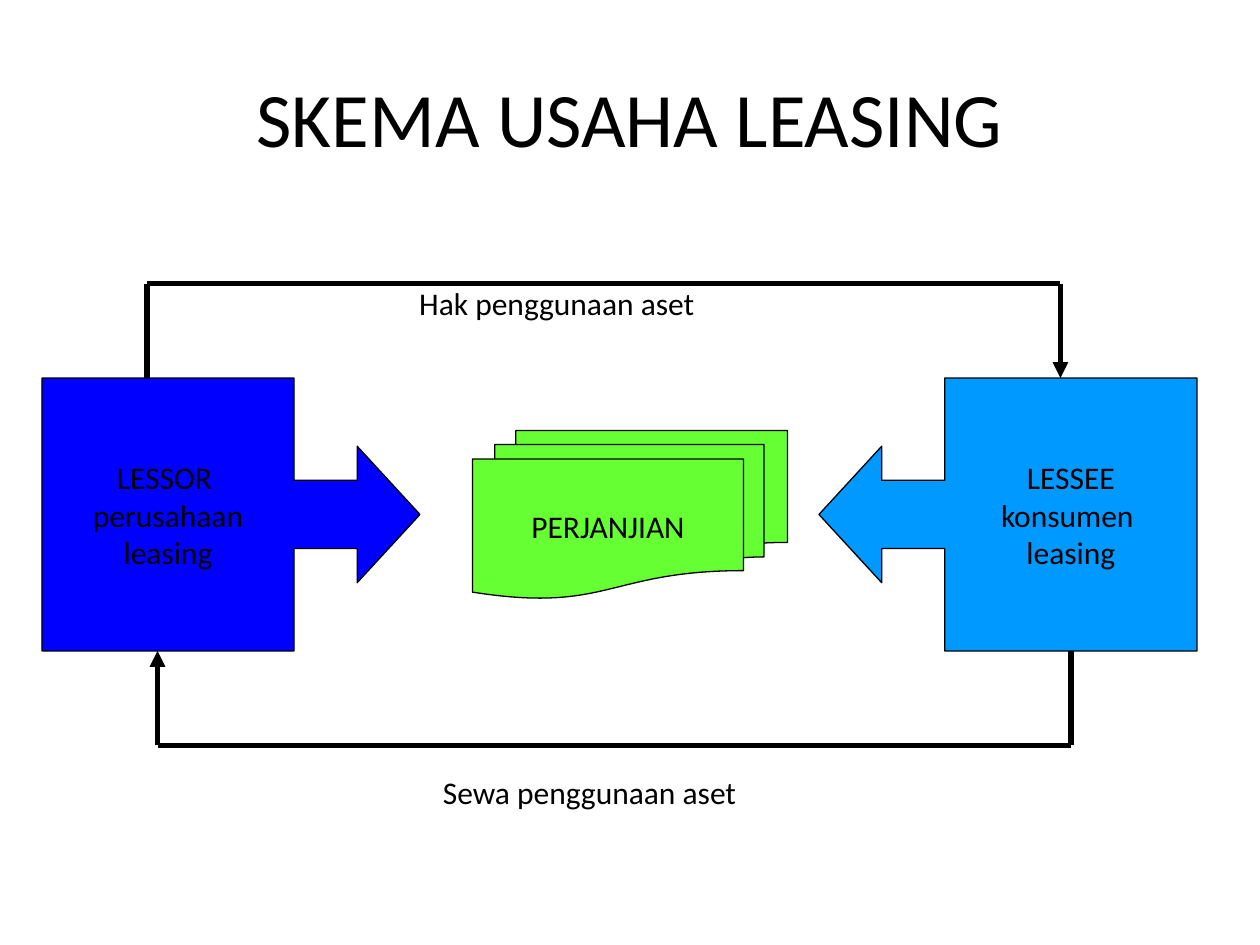
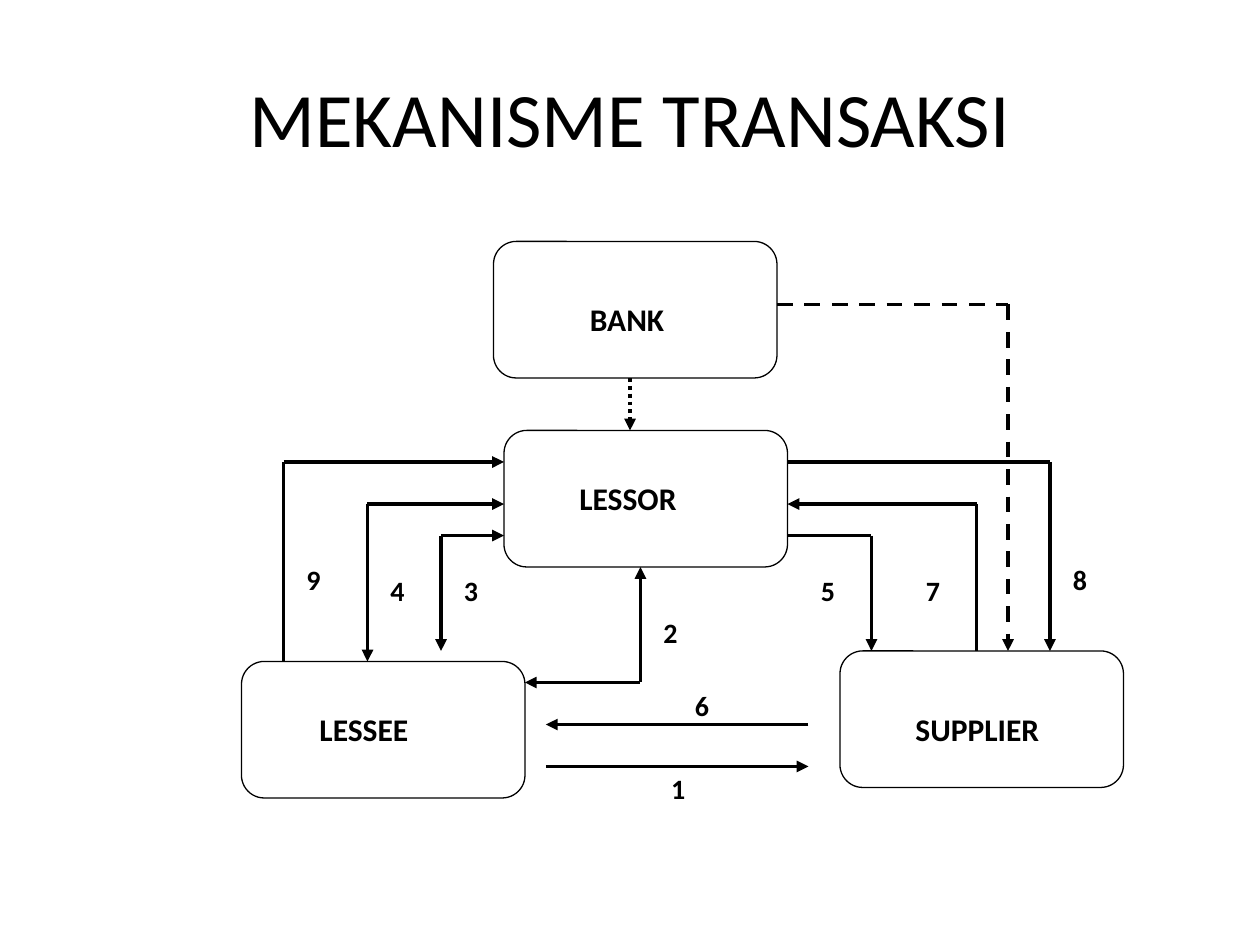
from pptx import Presentation
from pptx.dml.color import RGBColor as RGB
from pptx.enum.dml import MSO_LINE as DASH
from pptx.enum.shapes import MSO_CONNECTOR as CONN, MSO_SHAPE as SHAPE
from pptx.enum.text import MSO_ANCHOR as ANCHOR, PP_ALIGN as ALIGN
from pptx.oxml.ns import qn
from pptx.util import Pt
from lxml.etree import SubElement

PX = 9525
COLORS = {"ink": "000000", "lessor": "0000FF", "lessee": "0099FF", "paper": "66FF33"}
INK = RGB.from_string(COLORS["ink"])
TITLE = {"name": "Calibri", "size": Pt(44)}
BODY = {"name": "Calibri", "size": Pt(18)}
BOLD = {**BODY, "bold": True}
NUMBER = {**BOLD, "size": Pt(16)}


def write(shape, text, font, align=ALIGN.LEFT, anchor=ANCHOR.TOP, wrap=True):
    tf = shape.text_frame
    tf.text = text
    tf.word_wrap = wrap
    tf.vertical_anchor = anchor
    for p in tf.paragraphs:
        p.alignment = align
        for r in p.runs:
            r.font.color.rgb = INK
            for key, value in font.items():
                setattr(r.font, key, value)


def route(s, points, width, both=False, dash=None):
    last = len(points) - 2
    for i, (start, end) in enumerate(zip(points, points[1:])):
        c = s.shapes.add_connector(CONN.STRAIGHT, *[v * PX for v in start + end])
        c.line.color.rgb = INK
        c.line.width = Pt(width)
        if dash:
            c.line.dash_style = dash
        sp_pr = c._element.spPr
        ln = sp_pr.find(qn("a:ln"))
        if both and i == 0:
            SubElement(ln, qn("a:headEnd"), type="triangle")
        if i == last:
            SubElement(ln, qn("a:tailEnd"), type="triangle")
        SubElement(sp_pr, qn("a:effectLst"))


prs = Presentation()
prs.slide_width, prs.slide_height = 960 * PX, 720 * PX
slides = []
for title in ("SKEMA USAHA LEASING", "MEKANISME TRANSAKSI"):
    s = prs.slides.add_slide(prs.slide_layouts[6])
    tb = s.shapes.add_textbox(48 * PX, 29 * PX, 864 * PX, 120 * PX)
    write(tb, title, TITLE, ALIGN.CENTER, ANCHOR.MIDDLE)
    slides.append(s)
scheme, mechanism = slides

parties = [
    (SHAPE.FLOWCHART_MULTIDOCUMENT, (360, 328, 240, 128), "paper", "PERJANJIAN", ()),
    (SHAPE.RIGHT_ARROW_CALLOUT, (32, 288, 288, 208), "lessor",
     "LESSOR \nperusahaan\nleasing", (0.25, 0.25, 0.23, 0.667)),
    (SHAPE.LEFT_ARROW_CALLOUT, (624, 288, 288, 208), "lessee",
     "LESSEE\nkonsumen \nleasing", (0.25, 0.25, 0.23, 0.667)),
]
for kind, box, color, text, adjustments in parties:
    sp = scheme.shapes.add_shape(kind, *[v * PX for v in box])
    sp.shadow.inherit = False
    sp.fill.solid()
    sp.fill.fore_color.rgb = RGB.from_string(COLORS[color])
    sp.line.color.rgb = INK
    sp.line.width = Pt(0.75)
    for i, value in enumerate(adjustments):
        sp.adjustments[i] = value
    write(sp, text, BODY, ALIGN.CENTER, ANCHOR.MIDDLE, False)

route(scheme, [(112, 288), (112, 216), (808, 216), (808, 288)], 3)
route(scheme, [(816, 496), (816, 568), (120, 568), (120, 496)], 3)

for text, x, y in (("Hak penggunaan aset", 310, 212), ("Sewa penggunaan aset", 328, 584)):
    tb = scheme.shapes.add_textbox(x * PX, y * PX, 314 * PX, 48 * PX)
    write(tb, text, BODY)

for x, y in ((184, 504), (640, 496), (384, 328), (376, 184)):
    sp = mechanism.shapes.add_shape(SHAPE.FLOWCHART_ALTERNATE_PROCESS,
                                    x * PX, y * PX, 216 * PX, 104 * PX)
    sp.shadow.inherit = False
    sp.fill.background()
    sp.line.color.rgb = INK
    sp.line.width = Pt(0.75)

flows = [
    ([(416, 584), (616, 584)], False, None),
    ([(616, 552), (416, 552)], False, None),
    ([(600, 408), (664, 408), (664, 496)], False, None),
    ([(744, 496), (744, 384), (600, 384)], False, None),
    ([(600, 352), (800, 352), (800, 496)], False, None),
    ([(384, 408), (336, 408), (336, 496)], True, None),
    ([(400, 520), (488, 520), (488, 432)], True, None),
    ([(384, 384), (280, 384), (280, 504)], True, None),
    ([(216, 504), (216, 352), (384, 352)], False, None),
    ([(480, 288), (480, 328)], False, DASH.ROUND_DOT),
    ([(592, 232), (768, 232), (768, 496)], False, DASH.DASH),
]
for points, both, dash in flows:
    route(mechanism, points, 2.25, both, dash)

names = [
    ("LESSEE", 234, 536, 110), ("BANK", 440, 224, 88),
    ("SUPPLIER", 688, 536, 138), ("LESSOR", 432, 360, 114),
]
numbers = [
    ("1", 502, 583, 30), ("6", 520, 520, 30), ("2", 496, 464, 30),
    ("3", 344, 432, 30), ("4", 288, 432, 40), ("9", 224, 424, 30),
    ("5", 616, 432, 30), ("7", 696, 432, 30), ("8", 808, 424, 34),
]
for labels, height, font in ((names, 38, BOLD), (numbers, 36, NUMBER)):
    for text, x, y, width in labels:
        tb = mechanism.shapes.add_textbox(x * PX, y * PX, width * PX, height * PX)
        write(tb, text, font, wrap=False)

prs.save("out.pptx")
